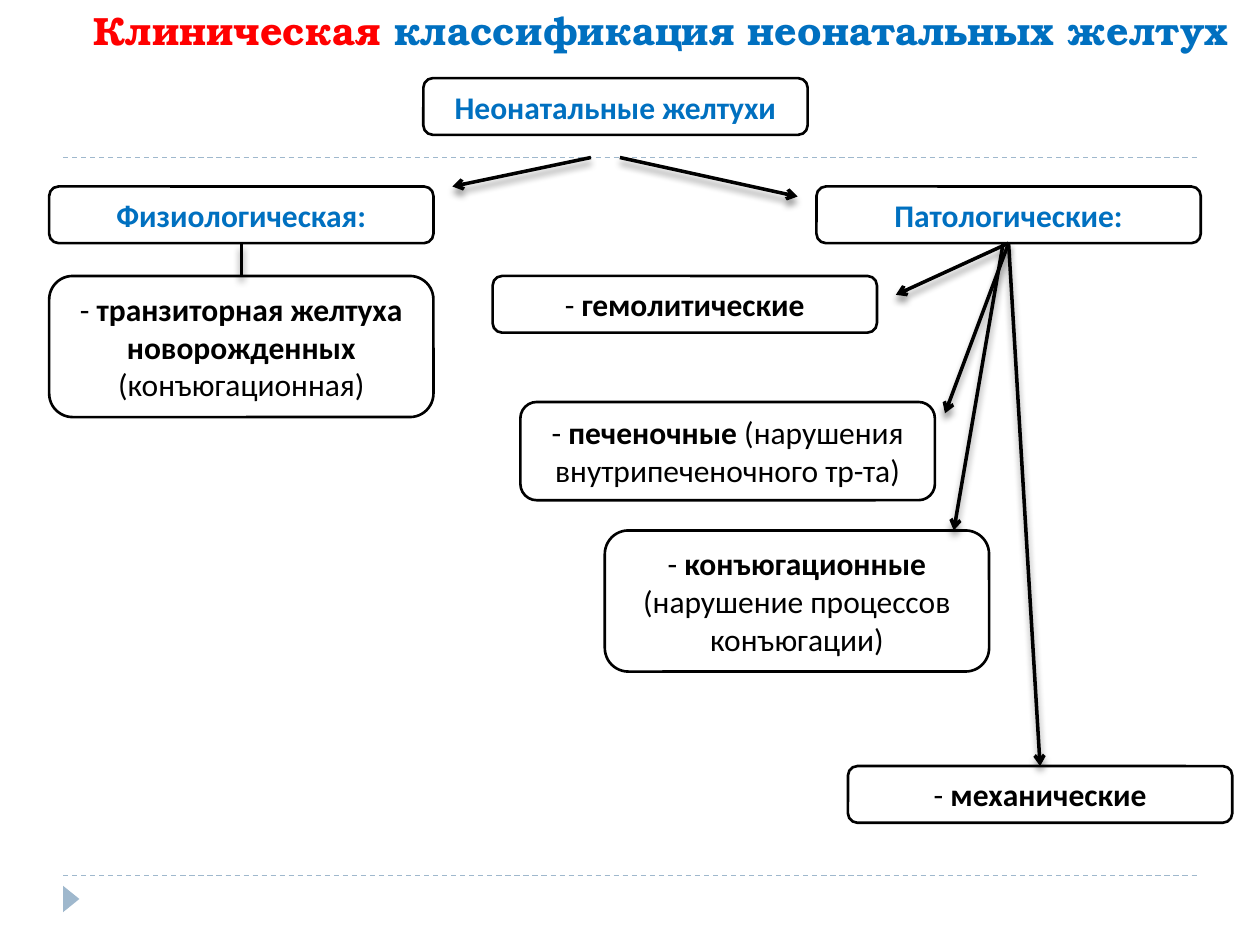
from lxml import etree
from pptx import Presentation
from pptx.dml.color import RGBColor
from pptx.enum.dml import MSO_LINE
from pptx.enum.shapes import MSO_CONNECTOR, MSO_SHAPE
from pptx.enum.text import MSO_ANCHOR, PP_ALIGN
from pptx.oxml.ns import qn
from pptx.util import Inches, Pt

STRAIGHT = MSO_CONNECTOR.STRAIGHT
ROUND, WEDGE = MSO_SHAPE.ROUNDED_RECTANGLE, MSO_SHAPE.ISOSCELES_TRIANGLE
CENTER, MIDDLE, BOTTOM = PP_ALIGN.CENTER, MSO_ANCHOR.MIDDLE, MSO_ANCHOR.BOTTOM
DASH = MSO_LINE.DASH
BLACK, WHITE, BLUE, RED, PALE = "000000", "FFFFFF", "0070C0", "FF0000", "9FB8CD"
WIDE, LOW = 3.05, 0.45

# Content: runs are (text, bold, colour)
TITLE = [("Клиническая", True, RED),
         (" классификация неонатальных желтух", True, BLUE)]


def head(text):
    return [(text, True, BLUE)]


def item(name, note=""):
    runs = [("- ", False, BLACK), (name, True, BLACK)]
    return runs + [(note, False, BLACK)] if note else runs


# name: left, top, width, height, runs
BOXES = {
    "root": (3.36, 0.62, WIDE, LOW, head("Неонатальные желтухи")),
    "normal": (0.39, 1.48, WIDE, LOW, head("Физиологическая:")),
    "disease": (6.48, 1.48, WIDE, LOW, head("Патологические:")),
    "transient": (0.39, 2.19, WIDE, 1.12,
                  item("транзиторная желтуха новорожденных ", "(конъюгационная)")),
    "hemolytic": (3.91, 2.19, WIDE, LOW, item("гемолитические")),
    "conjugate": (4.8, 4.21, WIDE, 1.12,
                  item("конъюгационные", " (нарушение процессов конъюгации)")),
    "hepatic": (4.13, 3.19, 3.29, 0.78,
                item("печеночные", " (нарушения внутрипеченочного тр-та)")),
    "blocked": (6.73, 6.08, WIDE, LOW, item("механические")),
}

# Ends are points or (box name, side); last value asks for an arrowhead
LINKS = [
    ((4.69, 1.25), (3.59, 1.48), True),
    ((4.92, 1.25), (6.33, 1.56), True),
    (("normal", 2), ("transient", 0), False),
    (("disease", 2), (7.11, 2.34), True),
    (("disease", 2), (7.5, 3.28), True),
    ((7.96, 1.94), (7.57, 4.21), True),
    (("disease", 2), ("blocked", 0), True),
]
RULES = [1.25, 6.95]


def color(code):
    return RGBColor.from_string(code)


def write(frame, runs, font, size, anchor):
    frame.word_wrap = True
    frame.vertical_anchor = anchor
    para = frame.paragraphs[0]
    para.alignment = CENTER
    para.font.name, para.font.size = font, Pt(size)
    for text, bold, code in runs:
        run = para.add_run()
        run.text = text
        run.font.bold = bold
        run.font.color.rgb = color(code)


def place(kind, left, top, width, height, fill):
    shape = slide.shapes.add_shape(
        kind, Inches(left), Inches(top), Inches(width), Inches(height))
    shape.shadow.inherit = False
    shape.fill.solid()
    shape.fill.fore_color.rgb = color(fill)
    return shape


def join(start, end, code, width):
    line = slide.shapes.add_connector(
        STRAIGHT, *(Inches(v) for v in (*start, *end)))
    line.line.color.rgb = color(code)
    line.line.width = Pt(width)
    effects = etree.SubElement(line._element.spPr, qn("a:effectLst"))
    return line, effects


def drop(effects):
    shade = etree.SubElement(effects, qn("a:outerShdw"), blurRad=str(Pt(4)),
                             dist=str(Pt(3.4)), dir="5400000", rotWithShape="0")
    tint = etree.SubElement(shade, qn("a:srgbClr"), val=BLACK)
    etree.SubElement(tint, qn("a:alpha"), val="40000")


def point(end):
    if end[0] not in BOXES:
        return end
    left, top, width, height, _ = BOXES[end[0]]
    return left + width / 2, top + (height if end[1] == 2 else 0)


deck = Presentation()
deck.slide_width, deck.slide_height = Inches(10), Inches(7.5)
slide = deck.slides.add_slide(deck.slide_layouts[6])

# Dashed rules and corner marker
for y in RULES:
    rule, _ = join((0.5, y), (9.5, y), PALE, 0.75)
    rule.line.dash_style = DASH
mark = place(WEDGE, 0.46, 7.07, 0.21, 0.13, PALE)
mark.rotation = 90
mark.line.fill.background()

# Title
title = slide.shapes.add_textbox(Inches(0.5), 0, Inches(9.5), Inches(0.47))
write(title.text_frame, TITLE, "TeX Gyre Bonum", 22.5, BOTTOM)

# Boxes
shapes = {}
for name, (*area, runs) in BOXES.items():
    box = shapes[name] = place(ROUND, *area, WHITE)
    box.line.color.rgb = color(BLACK)
    box.line.width = Pt(1.5)
    write(box.text_frame, runs, "Calibri", 18, MIDDLE)

# Links
for start, end, arrow in LINKS:
    link, effects = join(point(start), point(end), BLACK, 2)
    drop(effects)
    if start[0] in shapes:
        link.begin_connect(shapes[start[0]], start[1])
    if end[0] in shapes:
        link.end_connect(shapes[end[0]], end[1])
    if arrow:
        etree.SubElement(link.line._get_or_add_ln(), qn("a:tailEnd"), type="arrow")

deck.save("out.pptx")
